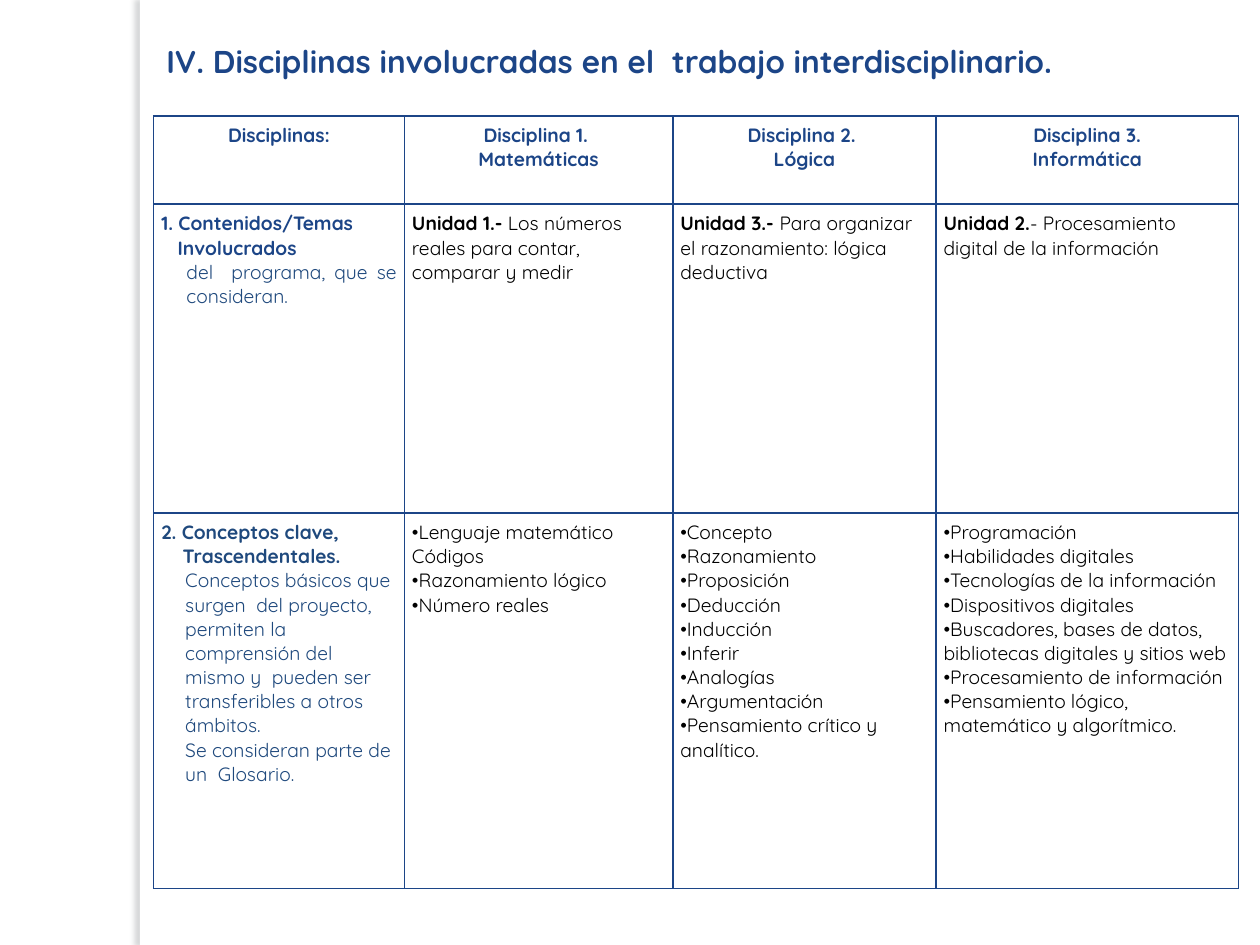
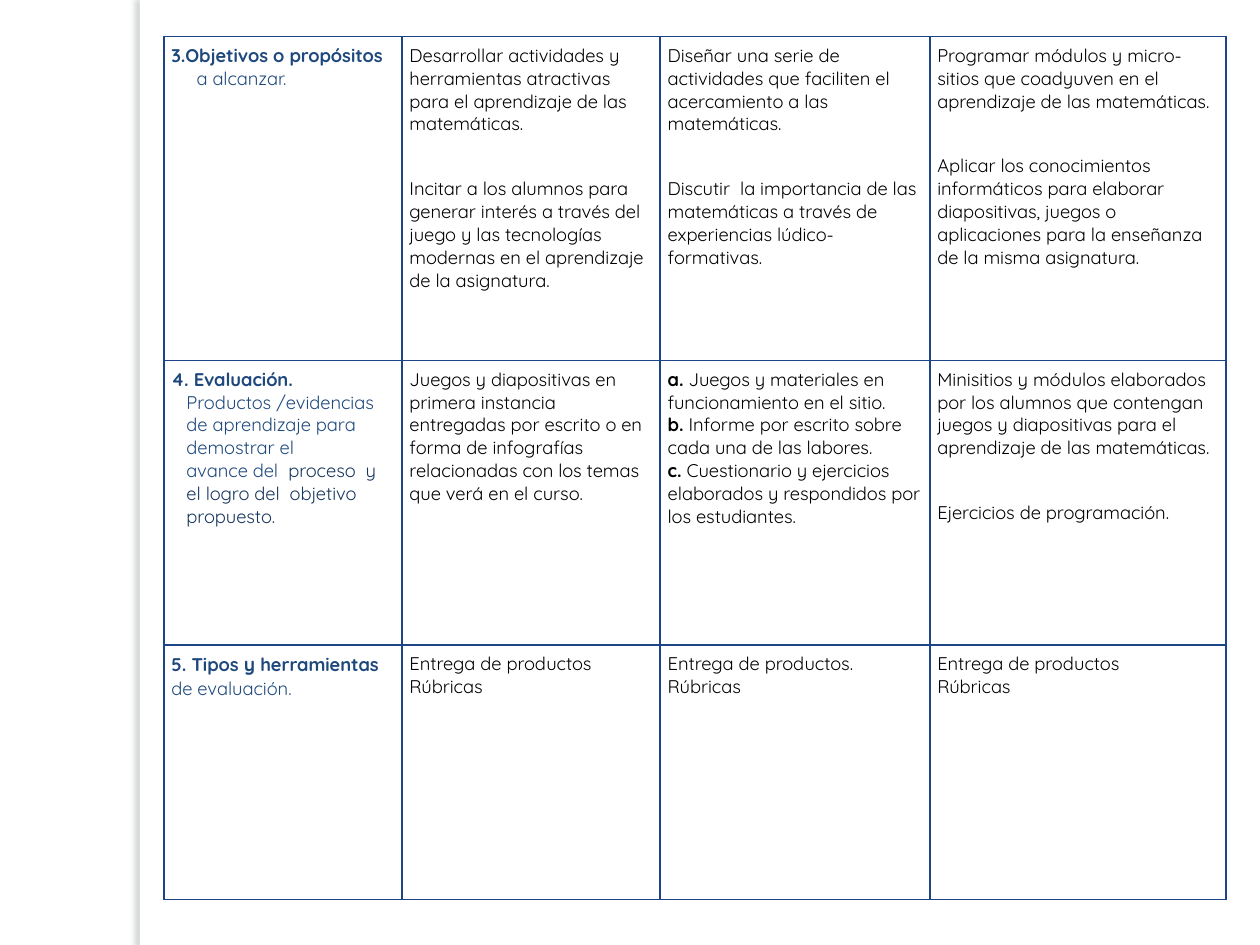
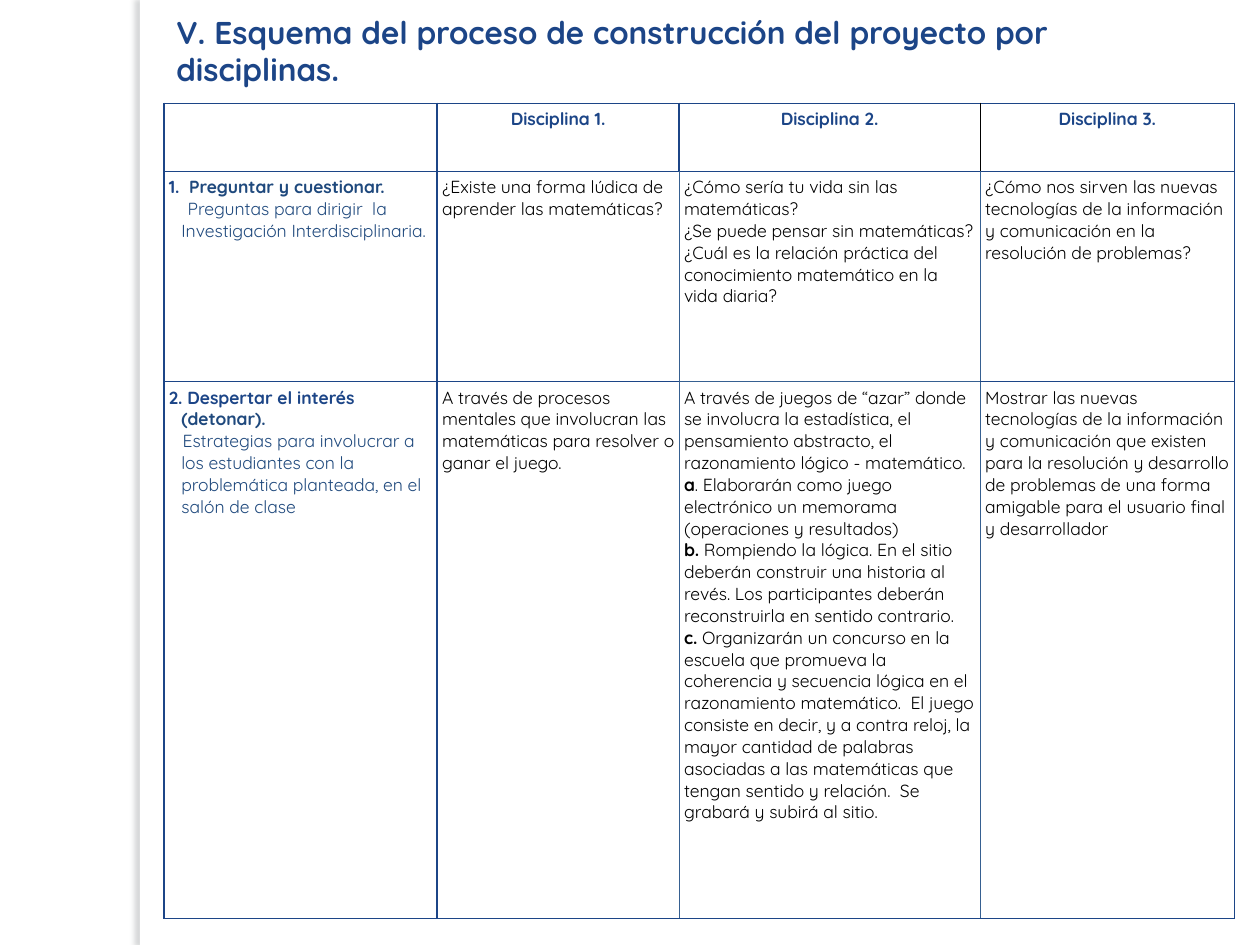
from dataclasses import dataclass
from typing import NamedTuple

from lxml import etree
from pptx import Presentation
from pptx.dml.color import RGBColor
from pptx.enum.shapes import MSO_SHAPE
from pptx.enum.text import MSO_ANCHOR, MSO_AUTO_SIZE, PP_ALIGN
from pptx.oxml.ns import qn
from pptx.util import Inches, Pt

RECTANGLE = MSO_SHAPE.RECTANGLE
TOP = MSO_ANCHOR.TOP
NO_AUTOFIT = MSO_AUTO_SIZE.NONE
LEFT, CENTER, JUSTIFY = PP_ALIGN.LEFT, PP_ALIGN.CENTER, PP_ALIGN.JUSTIFY

BLACK = RGBColor(0x00, 0x00, 0x00)
WHITE = RGBColor(0xFF, 0xFF, 0xFF)
BLUE = RGBColor(0x1C, 0x45, 0x87)
SLATE = RGBColor(0x1F, 0x49, 0x7D)
NAVY = RGBColor(0x17, 0x36, 0x5D)
STEEL = RGBColor(0x36, 0x60, 0x91)
SHADOW = RGBColor(0x61, 0x68, 0x6B)

FONT = "Quicksand"
TITLE_SIZE = 18
TITLE_ONLY, BLANK = 5, 6


class Span(NamedTuple):
    text: str
    bold: bool = False
    color: RGBColor = BLACK
    size: float | None = None


@dataclass(frozen=True)
class Para:
    spans: tuple[Span, ...]
    align: PP_ALIGN = LEFT
    left: float = 0
    first: float = 0
    before: float = 0
    bullet: str = ""
    start: int = 0


class Line(NamedTuple):
    color: RGBColor
    width: float


class Edge(NamedTuple):
    """The right (R) or bottom (B) edge of a cell, shared with its neighbour."""
    row: int
    col: int
    side: str
    line: Line


@dataclass(frozen=True)
class Grid:
    left: float
    top: float
    columns: tuple[float, ...]
    rows: tuple[float, ...]
    margin: float
    size: float
    cells: list[list[list[Para]]]
    edges: tuple[Edge, ...] = ()


class Title(NamedTuple):
    text: str
    left: float
    top: float
    width: float
    height: float


class Page(NamedTuple):
    title: Title | None
    grid: Grid


BASE_LINE = Line(BLUE, 1)
BLACK_HAIRLINE = Line(BLACK, 0.5)
STEEL_HAIRLINE = Line(STEEL, 0.5)


def body(*texts: str, gap: float = 0) -> list[Para]:
    """Black paragraphs, with a gap in points before each but the first."""
    return [Para((Span(text),), before=gap if i else 0) for i, text in enumerate(texts)]


def bullets(*texts: str) -> list[Para]:
    return [Para((Span(text),), bullet="•") for text in texts]


def lead(head: str, rest: str) -> Para:
    """A paragraph that opens in bold."""
    return Para((Span(head, True), Span(rest)))


def header(*texts: str) -> list[Para]:
    return [Para((Span(text, True, BLUE),), CENTER) for text in texts]


def heading(text: str, color: RGBColor = SLATE, **layout) -> Para:
    return Para((Span(text, True, color),), **layout)


def detail(text: str, color: RGBColor = SLATE, **layout) -> Para:
    return Para((Span(text, False, color),), **layout)


SUBJECTS = Grid(
    1.22, 0.92, (1.99, 2.13, 2.09, 2.4), (0.7, 2.45, 2.98), 0.06, 11,
    [
        [
            header("Disciplinas:"),
            header("Disciplina 1. ", "Matemáticas"),
            header("Disciplina 2. ", "Lógica"),
            header("Disciplina 3.", "Informática"),
        ],
        [
            [
                heading("1. Contenidos/Temas", BLUE, align=JUSTIFY),
                heading("Involucrados", BLUE, align=JUSTIFY, left=0.13),
                detail("del  programa, que se consideran.", align=JUSTIFY, left=0.2),
            ],
            [lead("Unidad 1.-", " Los números reales para contar, comparar y medir")],
            [lead("Unidad 3.- ", "Para organizar el razonamiento: lógica deductiva")],
            [lead("Unidad 2.", "- Procesamiento digital de la información")],
        ],
        [
            [
                heading("2. Conceptos clave,"),
                heading("Trascendentales.", left=0.17),
                detail("Conceptos básicos que surgen  del proyecto, permiten la comprensión "
                       "del mismo y  pueden ser transferibles a otros ámbitos.", left=0.19),
                detail("Se consideran parte de un  Glosario.", left=0.19),
            ],
            bullets("Lenguaje matemático Códigos", "Razonamiento lógico", "Número reales"),
            bullets("Concepto", "Razonamiento", "Proposición", "Deducción", "Inducción",
                    "Inferir", "Analogías", "Argumentación",
                    "Pensamiento crítico y analítico."),
            bullets("Programación", "Habilidades digitales", "Tecnologías de la información",
                    "Dispositivos digitales",
                    "Buscadores, bases de datos, bibliotecas digitales y sitios web",
                    "Procesamiento de información",
                    "Pensamiento lógico, matemático y algorítmico."),
        ],
    ],
)

GOAL_GAP = 24
EVIDENCE_INDENT = 0.12

GOALS = Grid(
    1.3, 0.29, (1.89, 2.05, 2.14, 2.35), (2.57, 2.26, 2.02), 0.06, 10.5,
    [
        [
            [
                heading("Objetivos o propósitos", start=3),
                detail("a alcanzar.", left=0.2),
            ],
            body("Desarrollar actividades y herramientas atractivas para el aprendizaje "
                 "de las matemáticas.",
                 "Incitar a los alumnos para generar interés a través del juego y las "
                 "tecnologías modernas en el aprendizaje de la asignatura.", gap=GOAL_GAP),
            body("Diseñar una serie de actividades que faciliten el acercamiento a las "
                 "matemáticas.",
                 "Discutir  la importancia de las matemáticas a través de experiencias "
                 "lúdico-formativas.", gap=GOAL_GAP),
            body("Programar módulos y micro-sitios que coadyuven en el aprendizaje de las "
                 "matemáticas.",
                 "Aplicar los conocimientos informáticos para elaborar diapositivas, juegos "
                 "o aplicaciones para la enseñanza de la misma asignatura.", gap=GOAL_GAP),
        ],
        [
            [
                heading("4. Evaluación."),
                *(detail(text, left=EVIDENCE_INDENT) for text in (
                    "Productos /evidencias", "de aprendizaje para", "demostrar el")),
                Para((Span("avance del ", False, SLATE), Span(" proceso  y", False, NAVY)),
                     left=EVIDENCE_INDENT),
                *(detail(text, NAVY, left=EVIDENCE_INDENT) for text in (
                    "el logro del  objetivo", "propuesto.")),
            ],
            body("Juegos y diapositivas en primera instancia entregadas por escrito o en "
                 "forma de infografías relacionadas con los temas que verá en el curso."),
            [
                lead("a.", " Juegos y materiales en funcionamiento en el sitio."),
                lead("b.", " Informe por escrito sobre cada una de las labores."),
                lead("c.", " Cuestionario y ejercicios elaborados y respondidos por los "
                           "estudiantes."),
            ],
            body("Minisitios y módulos elaborados por los alumnos que contengan juegos y "
                 "diapositivas para el aprendizaje de las matemáticas.",
                 "Ejercicios de programación.", gap=GOAL_GAP),
        ],
        [
            [Para((Span("5. Tipos ", True, SLATE), Span("y", True, SLATE, 11),
                   Span(" herramientas", True, SLATE),
                   Span(" de evaluación.", False, SLATE)))],
            body("Entrega de productos", "Rúbricas"),
            body("Entrega de productos.", "Rúbricas"),
            body("Entrega de productos", "Rúbricas"),
        ],
    ],
)

PROCESS = Grid(
    1.3, 0.82, (2.17, 1.92, 2.39, 2.02), (0.54, 1.67, 4.26), 0.04, 10,
    [
        [[], *(header(f"Disciplina {number}.") for number in (1, 2, 3))],
        [
            [
                Para((Span("1.  ", True, BLUE), Span("Preguntar y cuestionar.", True, SLATE)),
                     left=0.1, first=-0.1),
                detail("Preguntas para dirigir  la Investigación Interdisciplinaria.",
                       left=0.1, first=0.05),
            ],
            body("¿Existe una forma lúdica de aprender las matemáticas?"),
            body("¿Cómo sería tu vida sin las matemáticas?",
                 "¿Se puede pensar sin matemáticas?",
                 "¿Cuál es la relación práctica del conocimiento matemático en la vida "
                 "diaria?"),
            body("¿Cómo nos sirven las nuevas tecnologías de la información y comunicación "
                 "en la resolución de problemas?"),
        ],
        [
            [
                Para((Span("2. Despertar el interés ", True, BLUE),
                      Span("(detonar).", True, SLATE)), left=0.1, first=-0.1),
                detail("Estrategias para involucrar a los estudiantes con la problemática "
                       "planteada, en el salón de clase", left=0.1, first=0.01),
            ],
            body("A través de procesos mentales que involucran las matemáticas para "
                 "resolver o ganar el juego."),
            [
                *body("A través de juegos de “azar” donde se involucra la estadística, el "
                      "pensamiento abstracto, el razonamiento lógico - matemático."),
                lead("a", ". Elaborarán como juego electrónico un memorama (operaciones y "
                          "resultados)"),
                lead("b.", " Rompiendo la lógica. En el sitio deberán construir una historia "
                           "al revés. Los participantes deberán reconstruirla en sentido "
                           "contrario."),
                lead("c.", " Organizarán un concurso en la escuela que promueva la coherencia "
                           "y secuencia lógica en el razonamiento matemático.  El juego "
                           "consiste en decir, y a contra reloj, la mayor cantidad de "
                           "palabras asociadas a las matemáticas que tengan sentido y "
                           "relación.  Se grabará y subirá al sitio."),
            ],
            body("Mostrar las nuevas tecnologías de la información y comunicación que "
                 "existen para la resolución y desarrollo de problemas de una forma "
                 "amigable para el usuario final y desarrollador"),
        ],
    ],
    (
        Edge(0, 2, "R", BLACK_HAIRLINE),
        *(Edge(row, col, "R", STEEL_HAIRLINE) for row in (1, 2) for col in (1, 2)),
        Edge(1, 2, "B", STEEL_HAIRLINE),
    ),
)

PAGES = (
    Page(Title("IV. Disciplinas involucradas en el  trabajo interdisciplinario.",
               1.22, 0.28, 7.38, 0.4), SUBJECTS),
    Page(None, GOALS),
    Page(Title("V. Esquema del proceso de construcción del proyecto por disciplinas.",
               1.3, 0.05, 7.5, 0.71), PROCESS),
)


def add_color(parent, color: RGBColor):
    return etree.SubElement(parent, qn("a:srgbClr"), val=str(color))


def add_run(paragraph, span: Span, size: float) -> None:
    run = paragraph.add_run()
    run.text = span.text
    run.font.name = FONT
    run.font.size = Pt(span.size or size)
    run.font.bold = span.bold
    run.font.color.rgb = span.color


def write_paragraphs(frame, paras: list[Para], size: float) -> None:
    for i, para in enumerate(paras):
        paragraph = frame.add_paragraph() if i else frame.paragraphs[0]
        paragraph.alignment = para.align
        paragraph.space_before = Pt(para.before)
        properties = paragraph._p.get_or_add_pPr()
        properties.set("marL", str(Inches(para.left)))
        properties.set("indent", str(Inches(para.first)))
        if para.bullet:
            etree.SubElement(properties, qn("a:buFont"), typeface=FONT)
            etree.SubElement(properties, qn("a:buChar"), char=para.bullet)
        elif para.start:
            etree.SubElement(properties, qn("a:buAutoNum"), type="arabicPeriod",
                             startAt=str(para.start))
        for span in para.spans:
            add_run(paragraph, span, size)


def edge_lines(grid: Grid) -> dict[tuple[int, int, str], Line]:
    """Special lines by cell and side, entered for both cells that share an edge."""
    lines = {}
    for row, col, side, line in grid.edges:
        lines[row, col, side] = line
        neighbour = (row, col + 1, "L") if side == "R" else (row + 1, col, "T")
        lines[neighbour] = line
    return lines


def add_border(cell, side: str, line: Line) -> None:
    border = etree.SubElement(cell._tc.get_or_add_tcPr(), qn(f"a:ln{side}"),
                              w=str(Pt(line.width)))
    add_color(etree.SubElement(border, qn("a:solidFill")), line.color)


def draw_grid(slide, grid: Grid) -> None:
    table = slide.shapes.add_table(
        len(grid.rows), len(grid.columns), Inches(grid.left), Inches(grid.top),
        Inches(sum(grid.columns)), Inches(sum(grid.rows))).table
    table.first_row = table.horz_banding = False
    for column, width in zip(table.columns, grid.columns):
        column.width = Inches(width)
    special = edge_lines(grid)
    for r, (height, contents) in enumerate(zip(grid.rows, grid.cells)):
        table.rows[r].height = Inches(height)
        for c, paras in enumerate(contents):
            cell = table.cell(r, c)
            cell.margin_left = cell.margin_right = Inches(grid.margin)
            cell.margin_top = cell.margin_bottom = Inches(grid.margin)
            for side in "LRTB":
                add_border(cell, side, special.get((r, c, side), BASE_LINE))
            cell.fill.background()
            write_paragraphs(cell.text_frame, paras, grid.size)


def write_title(slide, title: Title) -> None:
    shape = slide.shapes.title
    shape.left, shape.top = Inches(title.left), Inches(title.top)
    shape.width, shape.height = Inches(title.width), Inches(title.height)
    frame = shape.text_frame
    frame.word_wrap = True
    frame.auto_size = NO_AUTOFIT
    frame.vertical_anchor = TOP
    write_paragraphs(frame, [heading(title.text, BLUE)], TITLE_SIZE)


def add_master_band(slide, master) -> None:
    """Draw the white band with its shadow to the left and move it to the master."""
    band = slide.shapes.add_shape(RECTANGLE, Inches(1.11), 0, Inches(0.08), Inches(7.5))
    band.fill.solid()
    band.fill.fore_color.rgb = WHITE
    band.line.fill.background()
    band.shadow.inherit = False
    effects = band.element.spPr.find(qn("a:effectLst"))
    shadow = etree.SubElement(effects, qn("a:outerShdw"), blurRad=str(Pt(3)),
                              dist=str(Pt(3)), dir="10800000", algn="r", rotWithShape="0")
    etree.SubElement(add_color(shadow, SHADOW), qn("a:alpha"), val="25000")
    next_id = max(shape.shape_id for shape in master.shapes) + 1
    band.element.nvSpPr.cNvPr.set("id", str(next_id))
    master.shapes.element.insert(2, band.element)


def main() -> None:
    deck = Presentation()
    deck.slide_width, deck.slide_height = Inches(10), Inches(7.5)
    for page in PAGES:
        layout = deck.slide_layouts[TITLE_ONLY if page.title else BLANK]
        slide = deck.slides.add_slide(layout)
        if page.title:
            write_title(slide, page.title)
        draw_grid(slide, page.grid)
    add_master_band(deck.slides[0], deck.slide_master)
    deck.save("out.pptx")


if __name__ == "__main__":
    main()
